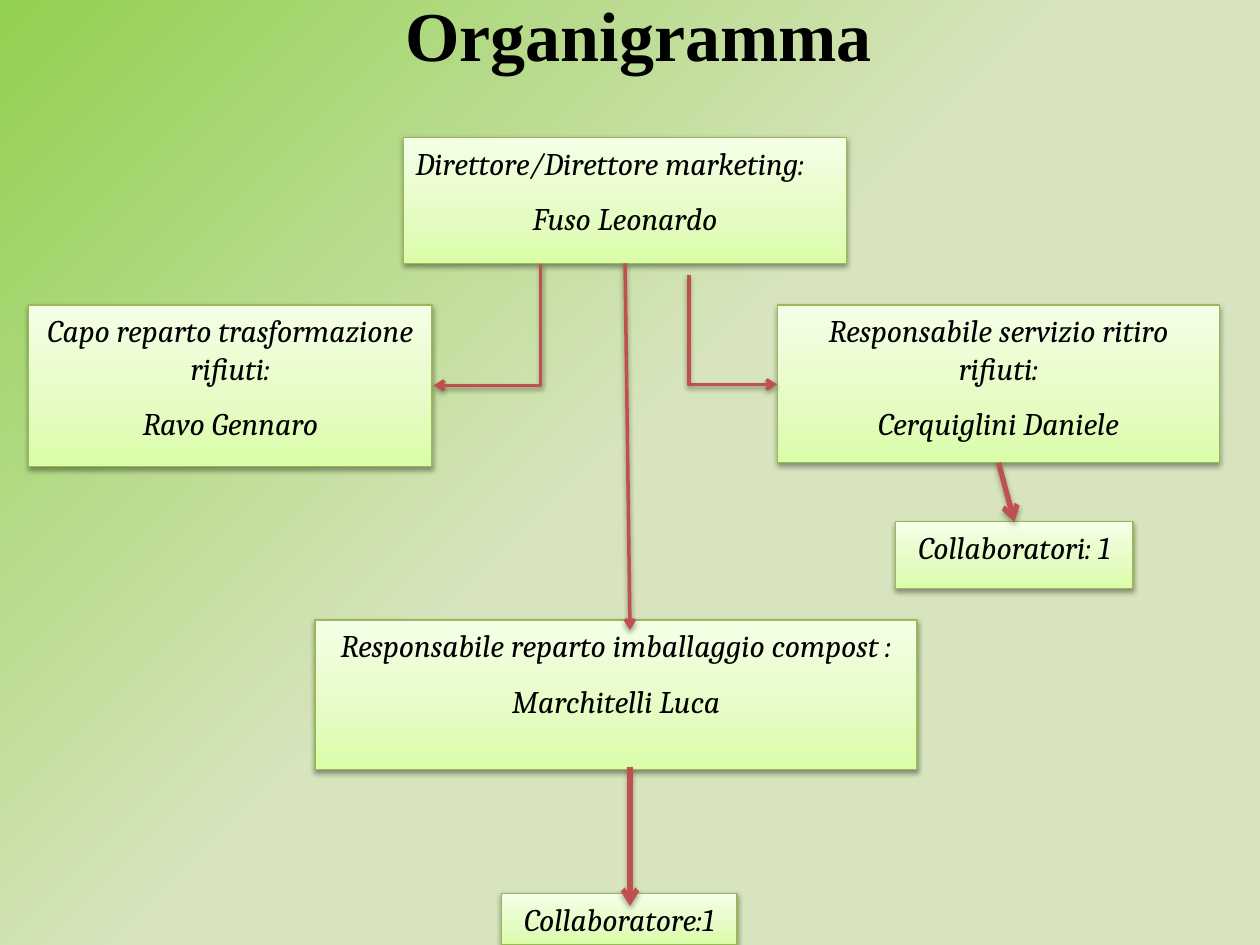
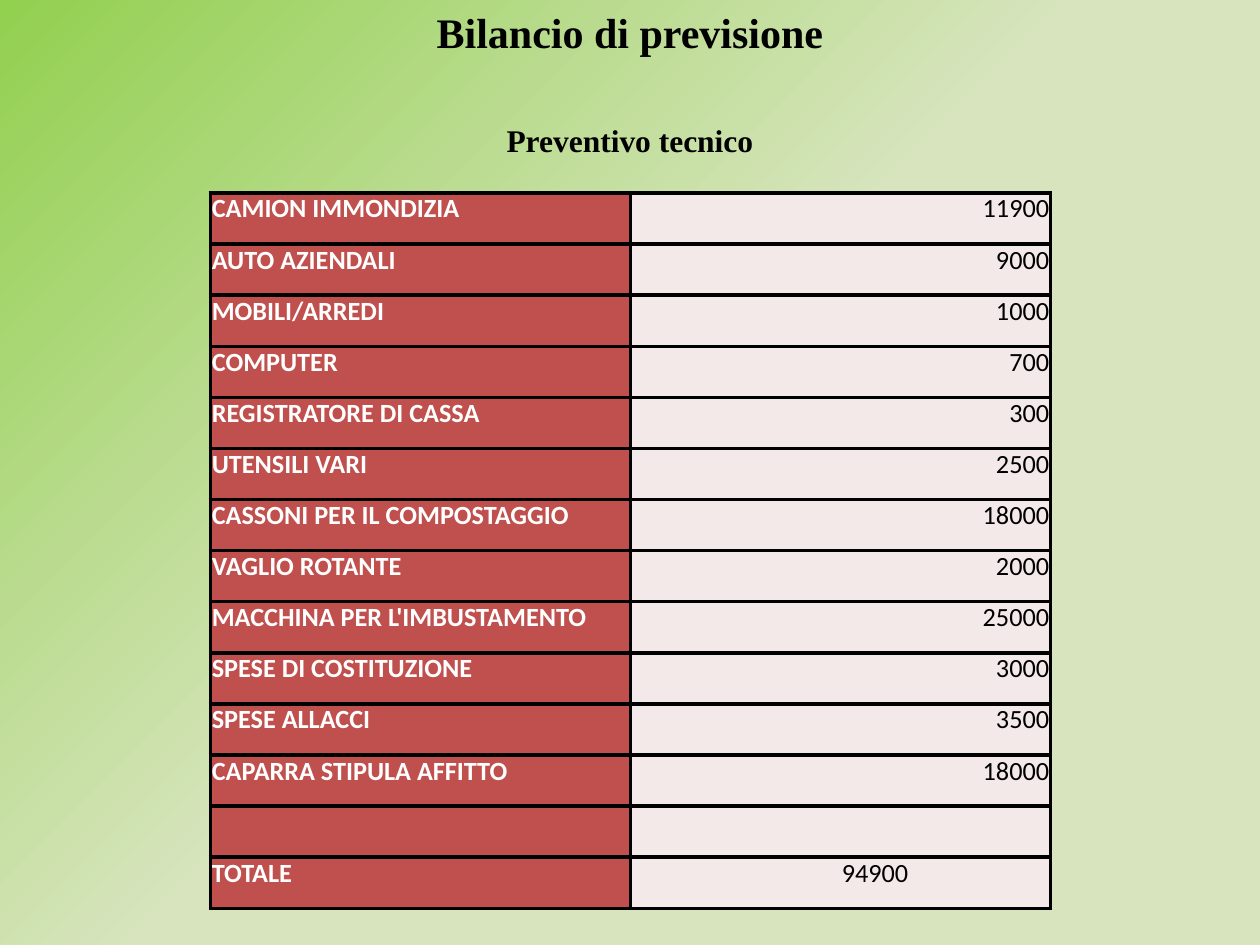
"""Build the organisation chart and budget slides."""
from lxml import etree
from pptx import Presentation
from pptx.dml.color import RGBColor
from pptx.enum.shapes import MSO_CONNECTOR, MSO_SHAPE
from pptx.enum.text import MSO_ANCHOR, MSO_AUTO_SIZE, PP_ALIGN
from pptx.oxml.ns import qn
from pptx.util import Cm, Pt

STRAIGHT, ELBOW = MSO_CONNECTOR.STRAIGHT, MSO_CONNECTOR.ELBOW
RECTANGLE = MSO_SHAPE.RECTANGLE
TOP, MIDDLE = MSO_ANCHOR.TOP, MSO_ANCHOR.MIDDLE
LEFT, CENTER, RIGHT = PP_ALIGN.LEFT, PP_ALIGN.CENTER, PP_ALIGN.RIGHT
NO_AUTOFIT = MSO_AUTO_SIZE.NONE
TITLE_ONLY = 5
TOP_SIDE, BOTTOM_SIDE = 0, 2

BLACK, WHITE, RED, PINK = "000000", "FFFFFF", "C0504D", "F4E9E9"
BOX_EDGE = "98B955"
BOX_STOPS = [(0, "DAFDA7"), (35, "E4FCC2"), (100, "F5FFE7")]
PAGE_STOPS = [(51, "D7E4BD"), (100, "92D050")]
TITLE_FONT, BOX_FONT, TABLE_FONT = "Times New Roman", "Cambria", "Calibri"

COSTS = [
    ("CAMION IMMONDIZIA", "11900"),
    ("AUTO AZIENDALI", "9000"),
    ("MOBILI/ARREDI", "1000"),
    ("COMPUTER", "700"),
    ("REGISTRATORE DI CASSA", "300"),
    ("UTENSILI VARI", "2500"),
    ("CASSONI PER IL COMPOSTAGGIO", "18000"),
    ("VAGLIO ROTANTE", "2000"),
    ("MACCHINA PER L'IMBUSTAMENTO", "25000"),
    ("SPESE DI COSTITUZIONE", "3000"),
    ("SPESE ALLACCI", "3500"),
    ("CAPARRA STIPULA AFFITTO", "18000"),
    ("", ""),
    ("TOTALE", "94900"),
]


def rgb(value):
    """Turn a hex string into a colour."""
    return RGBColor.from_string(value)


def add_node(parent, tag, **attributes):
    """Append a DrawingML element and return it."""
    node = etree.SubElement(parent, qn(tag))
    for name, value in attributes.items():
        node.set(name, str(value))
    return node


def paint_gradient(fill, parent, stops):
    """Give a fill the listed stops and return its gradient element."""
    fill.gradient()
    gradient = parent.find(qn("a:gradFill"))
    for child in list(gradient):
        gradient.remove(child)
    stop_list = add_node(gradient, "a:gsLst")
    for position, color in stops:
        stop = add_node(stop_list, "a:gs", pos=position * 1000)
        add_node(stop, "a:srgbClr", val=color)
    return gradient


def paint_master(master):
    """Set the corner gradient that all pages share."""
    fill = master.background.fill
    parent = master.element.find(".//" + qn("p:bgPr"))
    gradient = paint_gradient(fill, parent, PAGE_STOPS)
    path = add_node(gradient, "a:path", path="circle")
    add_node(path, "a:fillToRect", l=100000, t=100000)


def add_shadow(effects, distance=20000, opacity=38):
    """Put a soft downward shadow in an effect list."""
    shadow = add_node(effects, "a:outerShdw", blurRad=40000, dist=distance,
                      dir=5400000, rotWithShape=0)
    color = add_node(shadow, "a:srgbClr", val=BLACK)
    add_node(color, "a:alpha", val=opacity * 1000)


def write(para, text, font=BOX_FONT, size=18, color=BLACK, bold=False,
          italic=False, align=CENTER, before=0, after=0):
    """Write one formatted span into a paragraph."""
    para.alignment = align
    para.space_before, para.space_after = Pt(before), Pt(after)
    span = para.add_run()
    span.text = text
    span.font.name, span.font.size = font, Pt(size)
    span.font.bold, span.font.italic = bold, italic
    span.font.color.rgb = rgb(color)


def add_page(deck, area):
    """Add a title-only page and return it with its title frame."""
    page = deck.slides.add_slide(deck.slide_layouts[TITLE_ONLY])
    title = page.shapes.title
    title.left, title.top, title.width, title.height = map(Cm, area)
    frame = title.text_frame
    frame.auto_size, frame.vertical_anchor = NO_AUTOFIT, MIDDLE
    frame.word_wrap = True
    return page, frame


def add_box(page, area, *lines, first_align=CENTER):
    """Add a role box with one paragraph per line."""
    box = page.shapes.add_shape(RECTANGLE, *map(Cm, area))
    properties = box._element.spPr
    gradient = paint_gradient(box.fill, properties, BOX_STOPS)
    add_node(gradient, "a:lin", ang=16200000, scaled=1)
    box.line.color.rgb, box.line.width = rgb(BOX_EDGE), Pt(0.75)
    box.shadow.inherit = False
    add_shadow(properties.find(qn("a:effectLst")))
    frame = box.text_frame
    frame.word_wrap, frame.vertical_anchor = True, TOP
    for index, line in enumerate(lines):
        para = frame.add_paragraph() if index else frame.paragraphs[0]
        write(para, line, italic=True, after=10,
              align=CENTER if index else first_align)
    return box


def style_arrow(arrow, width, **shadow):
    """Give a connector its red line, arrowhead and shadow."""
    arrow.line.color.rgb, arrow.line.width = rgb(RED), Pt(width)
    add_node(arrow.line._get_or_add_ln(), "a:tailEnd", type="arrow")
    add_shadow(add_node(arrow._element.spPr, "a:effectLst"), **shadow)


def add_arrow(page, start, end, width=2, source=None, target=None, **shadow):
    """Add a straight arrow, joined to the boxes given."""
    arrow = page.shapes.add_connector(STRAIGHT, *map(Cm, start + end))
    if source:
        arrow.begin_connect(source, BOTTOM_SIDE)
    if target:
        arrow.end_connect(target, TOP_SIDE)
    style_arrow(arrow, width, **shadow)


def add_elbow(page, start, end):
    """Add an arrow that goes down and then sideways."""
    (x1, y1), (x2, y2) = start, end
    middle_x, middle_y = (x1 + x2) / 2, (y1 + y2) / 2
    half_width, half_height = (y2 - y1) / 2, abs(x2 - x1) / 2
    rightward = x2 > x1
    reach = -half_width if rightward else half_width
    arrow = page.shapes.add_connector(
        ELBOW, Cm(middle_x - reach), Cm(middle_y - half_height),
        Cm(middle_x + reach), Cm(middle_y + half_height))
    properties = arrow._element.spPr
    properties.find(qn("a:prstGeom")).set("prst", "bentConnector2")
    turn = 270 if rightward else 90
    properties.find(qn("a:xfrm")).set("rot", str(turn * 60000))
    style_arrow(arrow, 2)


def fill_cell(cell, text, fill, **text_format):
    """Fill, border and write one table cell."""
    cell.margin_left = cell.margin_right = Cm(0.03)
    cell.margin_top = cell.margin_bottom = Cm(0)
    cell.fill.solid()
    cell.fill.fore_color.rgb = rgb(fill)
    properties = cell._tc.get_or_add_tcPr()
    for index, side in enumerate("LRTB"):
        border = add_node(properties, "a:ln" + side, w=Pt(2.25))
        add_node(add_node(border, "a:solidFill"), "a:srgbClr", val=BLACK)
        properties.insert(index, border)
    if text:
        write(cell.text_frame.paragraphs[0], text, font=TABLE_FONT, size=15,
              **text_format)


def add_cost_table(page):
    """Add the two-column table of costs with its total."""
    height = Cm(1.03)
    table = page.shapes.add_table(len(COSTS), 2, Cm(4.24), Cm(3.89),
                                  Cm(16.94), height * len(COSTS)).table
    table.first_row = table.horz_banding = False
    last = len(COSTS) - 1
    for index, (label, amount) in enumerate(COSTS):
        table.rows[index].height = height
        fill_cell(table.cell(index, 0), label, RED, color=WHITE, bold=True,
                  align=LEFT)
        fill_cell(table.cell(index, 1), amount, PINK,
                  align=CENTER if index == last else RIGHT)
    table.cell(last, 1).margin_left = Cm(1.42)


def build_chart_page(deck):
    """Build the organisation chart."""
    page, frame = add_page(deck, (7.92, -0.3, 10.11, 1.96))
    write(frame.paragraphs[0], "Organigramma", font=TITLE_FONT, size=40,
          bold=True, align=LEFT)
    director = add_box(page, (8.13, 2.77, 8.94, 2.54),
                       "Direttore/Direttore marketing:", "Fuso Leonardo",
                       first_align=LEFT)
    add_box(page, (0.58, 6.15, 8.13, 3.25),
            "Capo reparto trasformazione rifiuti:", "Ravo Gennaro")
    collection = add_box(page, (15.67, 6.15, 8.92, 3.18),
                         "Responsabile servizio ritiro rifiuti:",
                         "Cerquiglini Daniele")
    helpers = add_box(page, (18.06, 10.52, 4.78, 1.35), "Collaboratori: 1")
    add_box(page, (6.35, 12.5, 12.14, 3.02),
            "Responsabile reparto imballaggio compost :", "Marchitelli Luca")
    add_box(page, (10.11, 18.01, 4.75, 1.04), "Collaboratore:1")

    strong = {"width": 3, "distance": 23000, "opacity": 35}
    add_arrow(page, (20.13, 9.33), (20.45, 10.52), source=collection,
              target=helpers, **strong)
    add_arrow(page, (12.7, 15.47), (12.7, 18.26), **strong)
    add_arrow(page, (12.6, 5.31), (12.7, 12.7), source=director)
    add_elbow(page, (13.89, 5.54), (15.67, 7.75))
    add_elbow(page, (10.9, 5.33), (8.74, 7.77))


def build_budget_page(deck):
    """Build the budget page."""
    page, frame = add_page(deck, (0, -0.05, 25.4, 3.43))
    write(frame.paragraphs[0], "Bilancio di previsione", font=TITLE_FONT,
          size=24, bold=True)
    write(frame.add_paragraph(), "Preventivo tecnico", font=TITLE_FONT,
          size=18, bold=True, before=37)
    add_cost_table(page)


def main():
    """Build and save the deck."""
    deck = Presentation()
    deck.slide_width, deck.slide_height = Cm(25.4), Cm(19.05)
    paint_master(deck.slide_master)
    build_chart_page(deck)
    build_budget_page(deck)
    deck.save("out.pptx")


if __name__ == "__main__":
    main()
